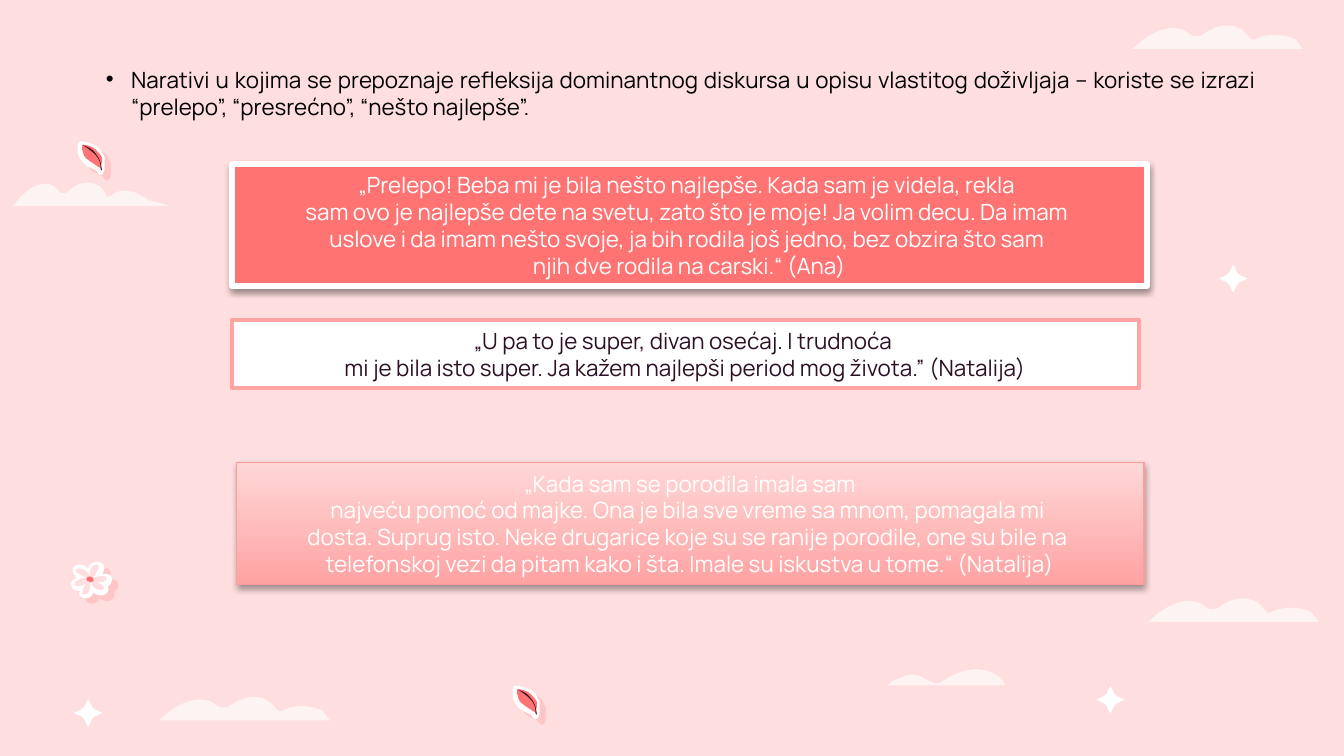
"""Build a slide of birth narratives on a pink sky with clouds and petals."""
from lxml import etree
from pptx import Presentation
from pptx import util as u
from pptx.dml.color import RGBColor
from pptx.enum import shapes, text
from pptx.oxml.ns import qn

BLUSH = RGBColor(0xFE, 0xDE, 0xDE)
CORAL = RGBColor(0xFF, 0x73, 0x73)
SALMON = RGBColor(0xFF, 0xA3, 0xA3)
ROSE = RGBColor(0xFC, 0x9D, 0x9D)
PALE = RGBColor(0xFF, 0xD7, 0xD7)
PLUM = RGBColor(0x2D, 0x10, 0x26)
WHITE = RGBColor(0xFF, 0xFF, 0xFF)
BLACK = RGBColor(0, 0, 0)

UNIT = 0.0254
STEPS = 6
PETAL_SHADOW = (CORAL, 22, 0, 4.5, 41)

CLOUD = [
    (71, 0), (65, 0, 60, 2, 55, 5), (53, 7, 50, 8, 48, 8), (45, 8, 44, 7, 42, 6),
    (39, 3, 35, 2, 30, 2), (27, 2, 23, 3, 20, 4), (12, 7, 6, 12, 0, 17.5),
    (127, 17.5), (125, 15, 123, 12, 121, 10), (116, 8, 111, 7, 106, 7),
    (101, 7, 97, 8, 92, 10), (90, 11, 89, 11, 87, 9), (84, 4, 78, 0, 71, 0)]
LONG_CLOUD = [
    (56, 0), (51, 0, 47, 2, 43, 5), (42, 6, 40, 8, 38, 8), (35, 8, 34, 6, 33, 5),
    (31, 2, 27, 1, 24, 1), (21, 1, 18, 2, 16, 3), (10, 6, 5, 11, 0, 17.5),
    (116, 17.5), (110, 14, 103, 15, 98, 11), (93, 8, 89, 6, 84, 6),
    (80, 6, 76, 7, 73, 10), (70, 11, 69, 10, 69, 8), (66, 3, 62, 0, 56, 0)]
SMALL_CLOUD = [
    (66, 0), (56, 0, 47, 5, 39, 10), (36, 12, 32, 9, 28, 7), (25, 5, 22, 4, 18, 4),
    (16, 4, 13, 5, 11, 6), (7, 7, 3, 9, 0, 12), (88, 12), (84, 4, 75, 0, 66, 0)]
SPARKLE = [
    (10.5, 0), (8.5, 4), (8, 6, 6, 8, 4, 8.5), (0, 10.5), (4, 12.5),
    (6, 13, 8, 15, 8.5, 17), (10.5, 21), (12.5, 17), (13, 15, 15, 13, 17, 12.5),
    (21, 10.5), (17, 8.5), (15, 8, 13, 6, 12.5, 4), (10.5, 0)]
PETAL = [
    ([(3, 0), (9, 1, 14, 3, 17, 6), (18, 8, 19, 10, 20, 12), (20, 14, 20, 16, 20, 17),
      (20, 20), (20, 22, 19, 23, 19, 24), (18, 25, 17, 25, 17, 25),
      (16, 25, 15, 24, 14, 22), (11, 20, 7, 19, 5, 17), (3, 15, 1, 12, 0, 9),
      (0, 7, 0, 4, 0, 3), (0, 1, 1, 0, 3, 0)], WHITE, PETAL_SHADOW),
    ([(3.5, 2.5), (8, 3, 12, 4, 15, 8), (16, 9, 17, 10, 18, 12),
      (18, 13, 18, 15, 18, 16), (17, 18, 18, 20, 17.5, 21.5),
      (17, 20, 16, 19, 15, 19), (13, 17, 10, 16, 8, 14), (6, 13, 4, 10, 4, 8),
      (3, 6, 3, 4, 3.5, 2.5)], CORAL, None),
    ([(4, 3), (8, 4.5, 11, 6, 13.5, 9.5), (15.5, 12, 17.3, 15, 17.5, 19),
      (18, 21.5), (17.3, 21.5), (17, 19), (17, 15, 15, 12, 12.7, 9.7),
      (10, 7, 7, 5, 4, 3)], PLUM, None)]
FLOWER = [
    ([(20, 0), (17, 0, 14, 2, 13, 5), (12, 4, 10, 2, 7, 2), (5, 2, 3, 3, 2, 5),
      (1, 8, 3, 10, 5, 12), (1, 13, 0, 16, 1, 18), (1, 20, 3, 21, 7, 22),
      (6, 24, 7, 25, 8, 26), (12, 28, 16, 27, 17, 23), (20, 25, 24, 26, 26, 24),
      (28, 23, 29, 21, 28, 18), (31, 17, 31, 14, 31, 12), (30, 9, 27, 9, 24, 9),
      (25, 6, 26, 4, 25, 3), (24, 1, 22, 0, 20, 0)], WHITE, PETAL_SHADOW),
    ([(19, 2), (15, 3, 14, 7, 15, 11), (13, 7, 10, 5, 6, 5), (4, 5, 4, 7, 5, 8),
      (7, 9, 9, 11, 13, 12), (9, 12, 4, 13, 3, 17), (6, 20, 11, 17, 14, 14),
      (11, 17, 9, 20, 9, 24), (13, 26, 15, 21, 15, 15), (16, 18, 19, 21, 23, 21),
      (26, 21, 25, 18, 23, 17), (21, 16, 20, 15, 19, 15), (21, 15, 25, 16, 27, 13),
      (28, 9, 20, 11, 17, 12), (18, 10, 20, 8, 21, 5), (22, 3, 20, 2, 19, 2)],
     BLUSH, None),
    ([(14, 11), (13, 11, 12, 12, 12, 13), (12, 14, 14, 15, 15, 15),
      (17, 15, 18, 14, 17, 13), (17, 12, 16, 11, 14, 11)], CORAL, None)]

ANA = [
    "„Prelepo! Beba mi je bila nešto najlepše. Kada sam je videla, rekla ",
    "sam ovo je najlepše dete na svetu, zato što je moje! Ja volim decu. Da imam ",
    "uslove i da imam nešto svoje, ja bih rodila još jedno, bez obzira što sam ",
    "njih dve rodila na carski.“ (Ana)"]
NATALIJA_JOY = [
    "„U pa to je super, divan osećaj. I trudnoća ",
    "mi je bila isto super. Ja kažem najlepši period mog života.” (Natalija)"]
NATALIJA_HELP = [
    " „Kada sam se porodila imala sam ",
    "najveću pomoć od majke. Ona je bila sve vreme sa mnom, pomagala mi ",
    "dosta. Suprug isto. Neke drugarice koje su se ranije porodile, one su bile na ",
    "telefonskoj vezi da pitam kako i šta. Imale su iskustva u tome.“ (Natalija)"]
INTRO = ("Narativi u kojima se prepoznaje refleksija dominantnog diskursa u opisu "
         "vlastitog doživljaja – koriste se izrazi “prelepo”, “presrećno”, "
         "“nešto najlepše”.")


def set_all(target, values):
    """Set every named attribute of the target."""
    for name, value in values.items():
        setattr(target, name, value)


def flatten(outline):
    """Turn line ends and cubic curves into a list of points."""
    points = [outline[0]]
    for segment in outline[1:]:
        if len(segment) == 2:
            points.append(segment)
            continue
        knots = [points[-1], segment[:2], segment[2:4], segment[4:]]
        for step in range(1, STEPS + 1):
            t = step / STEPS
            weights = ((1 - t) ** 3, 3 * t * (1 - t) ** 2, 3 * t * t * (1 - t), t ** 3)
            points.append(tuple(sum(w * k[axis] for w, k in zip(weights, knots))
                                for axis in (0, 1)))
    return points


def set_shadow(shape, color, opacity, blur, distance, angle):
    """Give the shape an outer shadow."""
    effects = shape._element.spPr.find(qn("a:effectLst"))
    outer = etree.SubElement(effects, qn("a:outerShdw"), {
        "blurRad": str(u.Pt(blur)), "dist": str(u.Pt(distance)),
        "dir": str(angle * 60000), "algn": "bl", "rotWithShape": "0"})
    tone = etree.SubElement(outer, qn("a:srgbClr"), val=str(color))
    etree.SubElement(tone, qn("a:alpha"), val=str(opacity * 1000))


def add_outline(parent, left, top, outline, color, shadow=None, opacity=100):
    """Draw a filled outline with its corner at left and top in centimetres."""
    points = [(u.Cm(left + UNIT * x), u.Cm(top + UNIT * y)) for x, y in flatten(outline)]
    builder = parent.build_freeform(*points[0])
    builder.add_line_segments(points[1:], close=True)
    figure = builder.convert_to_shape()
    figure.fill.solid()
    figure.fill.fore_color.rgb = color
    figure.line.fill.background()
    figure.shadow.inherit = False
    if shadow:
        set_shadow(figure, *shadow)
    if opacity < 100:
        tone = figure._element.spPr.find(qn("a:solidFill"))[0]
        etree.SubElement(tone, qn("a:alpha"), val=str(opacity * 1000))


def add_layers(slide, left, top, layers):
    """Draw a group of stacked outlines."""
    group = slide.shapes.add_group_shape()
    for outline, color, shadow in layers:
        add_outline(group.shapes, left, top, outline, color, shadow)


def write(frame, lines, color, alignment):
    """Write one paragraph for each line."""
    set_all(frame, {"word_wrap": True, "auto_size": text.MSO_AUTO_SIZE.SHAPE_TO_FIT_TEXT})
    for index, line in enumerate(lines):
        paragraph = frame.add_paragraph() if index else frame.paragraphs[0]
        paragraph.alignment = alignment
        run = paragraph.add_run()
        run.text = line
        set_all(run.font, {"name": "Manrope", "size": u.Pt(12)})
        run.font.color.rgb = color


def add_intro(slide):
    """Add the bulleted opening statement."""
    intro = slide.shapes.add_textbox(u.Cm(1.75), u.Cm(1.12), u.Cm(22.25), u.Cm(1.28))
    write(intro.text_frame, [INTRO], BLACK, text.PP_ALIGN.JUSTIFY)
    properties = intro.text_frame.paragraphs[0]._p.get_or_add_pPr()
    properties.set("marL", str(u.Cm(0.48)))
    properties.set("indent", str(u.Cm(-0.48)))
    bullet_color = etree.SubElement(properties, qn("a:buClr"))
    etree.SubElement(bullet_color, qn("a:srgbClr"), val=str(BLACK))
    etree.SubElement(properties, qn("a:buFont"), typeface="Arial")
    etree.SubElement(properties, qn("a:buChar"), char="•")


def add_quote(slide, box, lines, fills, border, ink, shadow=None):
    """Add a quotation box with a plain or two-colour fill."""
    quote = slide.shapes.add_shape(shapes.MSO_SHAPE.RECTANGLE, *map(u.Cm, box))
    quote.shadow.inherit = False
    if len(fills) > 1:
        quote.fill.gradient()
        quote.fill.gradient_angle = 90
        for stop, color in zip(quote.fill.gradient_stops, fills):
            stop.color.rgb = color
    else:
        quote.fill.solid()
        quote.fill.fore_color.rgb = fills[0]
    quote.line.color.rgb, quote.line.width = border[0], u.Pt(border[1])
    if shadow:
        set_shadow(quote, *shadow)
    write(quote.text_frame, lines, ink, text.PP_ALIGN.CENTER)


def main():
    """Build and save the slide."""
    deck = Presentation()
    set_all(deck, {"slide_width": u.Cm(25.4), "slide_height": u.Cm(14.29)})
    slide = deck.slides.add_slide(deck.slide_layouts[6])
    slide.background.fill.solid()
    slide.background.fill.fore_color.rgb = BLUSH

    for left, top, cloud in [(0.24, 3.45, LONG_CLOUD), (21.4, 0.48, CLOUD), (3.01, 13.17, CLOUD),
                             (21.7, 11.31, CLOUD), (16.77, 12.65, SMALL_CLOUD)]:
        add_outline(slide.shapes, left, top, cloud, WHITE, opacity=64)
    for left, top in [(23.04, 5), (1.4, 13.21), (20.72, 12.96)]:
        add_outline(slide.shapes, left, top, SPARKLE, WHITE)
    for left, top, layers in [(1.33, 10.62, FLOWER), (1.47, 2.67, PETAL), (9.69, 12.96, PETAL)]:
        add_layers(slide, left, top, layers)

    add_intro(slide)
    add_quote(slide, (4.38, 3.1, 17.3, 2.31), ANA, [CORAL], (WHITE, 3), WHITE,
              (BLACK, 38, 3.1, 1.6, 90))
    add_quote(slide, (4.38, 6.05, 17.15, 1.28), NATALIJA_JOY, [WHITE], (SALMON, 2), PLUM)
    add_quote(slide, (4.47, 8.74, 17.15, 2.31), NATALIJA_HELP, [SALMON, PALE], (ROSE, 0.75),
              WHITE, (BLACK, 35, 3.1, 1.8, 90))
    deck.save("out.pptx")


if __name__ == "__main__":
    main()
